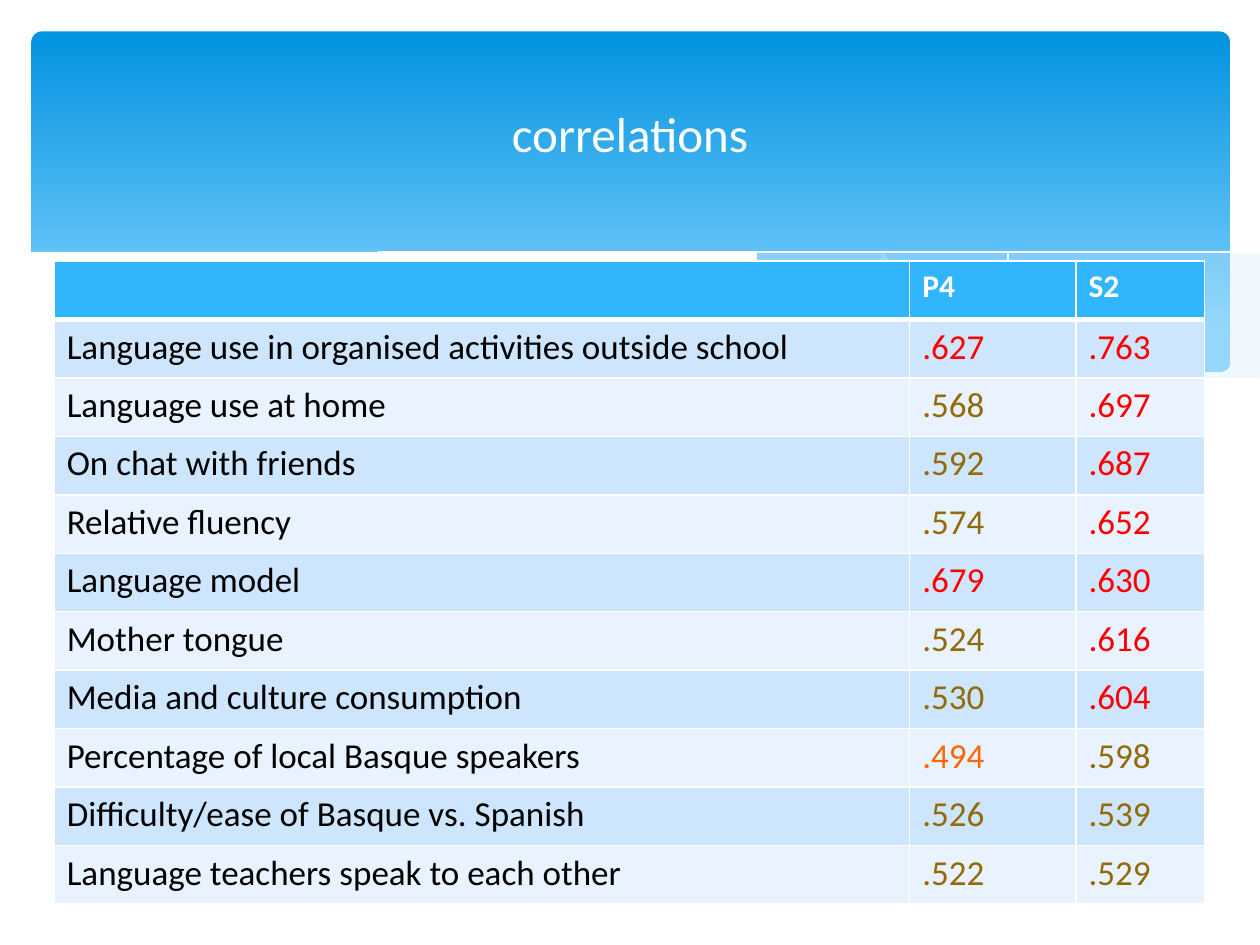
from lxml import etree
from pptx import Presentation
from pptx.dml.color import RGBColor
from pptx.enum import shapes, text
from pptx.oxml.ns import qn
from pptx import util as u

# Content
TITLE = "correlations"
HEAD = ("", "P4", "S2")
ROWS = [
    ("Language use in organised activities outside school", ".627", ".763"),
    ("Language use at home", ".568", ".697"),
    ("On chat with friends", ".592", ".687"),
    ("Relative fluency", ".574", ".652"),
    ("Language model", ".679", ".630"),
    ("Mother tongue", ".524", ".616"),
    ("Media and culture consumption", ".530", ".604"),
    ("Percentage of local Basque speakers", ".494", ".598"),
    ("Difficulty/ease of Basque vs. Spanish", ".526", ".539"),
    ("Language teachers speak to each other", ".522", ".529"),
]
COLS = (6.79, 1.32, 1.02)
TABLE = (0.43, 2.07, sum(COLS), 5.11)

THEME = dict(
    font="Calibri", title=28, head=18, body=20,
    white="FFFFFF", black="000000", top="0293E0", low="83D3FE", wave="C6E7FC",
    bar="31B6FD", bands=("CEE5FE", "E8F3FF"),
    high="FF0000", mid="936A08", weak="FF6600",
)

# Waves: each is a list of curves through a few points, with fill and opacity
WAVES = [
    dict(fill="wave", alpha=29, curves=[
        [(9.76, 2), (9.35, 2.07), (8.61, 2.23), (7.79, 2.42), (7.06, 2.57), (6.61, 2.65)],
        [(6.61, 2.65), (7.19, 2.72), (7.69, 2.77), (8.24, 2.77), (8.81, 2.73),
         (9.28, 2.63), (9.76, 2.47)]]),
    dict(fill="wave", alpha=40, curves=[
        [(8.93, 2.73), (8.07, 2.6), (7.06, 2.4), (6.29, 2.22), (5.55, 2.05), (4.89, 1.94),
         (4.2, 1.87), (3.61, 1.85), (3.13, 1.88), (2.86, 1.91)],
        [(2.86, 1.91), (3.62, 2.03), (4.49, 2.22), (5.3, 2.4), (6.18, 2.58), (6.95, 2.7),
         (7.61, 2.77), (8.18, 2.78), (8.57, 2.77), (8.93, 2.73)]]),
    dict(curves=[
        [(3.09, 1.95), (3.44, 1.9), (3.87, 1.87), (4.33, 1.87), (4.89, 1.9), (5.56, 1.97),
         (6.36, 2.08), (7.27, 2.26), (8.31, 2.51), (9.07, 2.72)]]),
    dict(curves=[
        [(6.13, 2.57), (6.95, 2.35), (7.76, 2.16), (8.66, 1.99), (9.24, 1.9), (9.75, 1.85)]]),
    dict(fill="white", alpha=100, curves=[
        [(9.77, 2.46), (9.3, 2.62), (8.75, 2.73), (8.09, 2.77), (7.44, 2.74), (6.68, 2.65),
         (5.79, 2.5), (4.47, 2.2), (3.65, 2.02), (2.92, 1.9), (2.3, 1.85), (1.77, 1.84),
         (1.32, 1.86), (0.95, 1.91), (0.59, 1.99), (0.23, 2.13)],
        [(0.23, 3.29), (9.77, 3.29)]]),
]


def rgb(name):
    return RGBColor.from_string(THEME.get(name, name))


def box(*nums):
    return [u.Inches(n) for n in nums]


def style(par, size, color, bold=False):
    for run in par.runs:
        font = run.font
        font.name, font.size, font.bold = THEME["font"], u.Pt(size), bold
        font.color.rgb = rgb(color)


def smooth(pts, steps=5):
    """Catmull-Rom curve through the points."""
    ext = [pts[0], *pts, pts[-1]]
    out = [pts[0]]
    for a, b, c, d in zip(ext, ext[1:], ext[2:], ext[3:]):
        for i in range(1, steps + 1):
            t = i / steps
            out.append(tuple(
                (2*q + (r - p)*t + (2*p - 5*q + 4*r - s)*t**2 + (3*q - p - 3*r + s)*t**3) / 2
                for p, q, r, s in zip(a, b, c, d)))
    return out


def draw_wave(slide, curves, fill=None, alpha=100):
    pts = [p for curve in curves for p in smooth(curve)]
    pen = slide.shapes.build_freeform(*pts[0], scale=u.Inches(1))
    pen.add_line_segments(pts[1:], close=fill is not None)
    wave = pen.convert_to_shape()
    wave.shadow.inherit = False
    if fill:
        wave.fill.solid()
        wave.fill.fore_color.rgb = rgb(fill)
        wave.line.fill.background()
        clr = wave.fill._xPr.find(".//" + qn("a:srgbClr"))
        etree.SubElement(clr, qn("a:alpha"), val=str(alpha * 1000))
    else:
        wave.fill.background()
        wave.line.color.rgb = rgb("white")
        wave.line.width = 0


def border(cell, **widths):
    props = cell._tc.get_or_add_tcPr()
    for side in "LRTB":
        width = u.Pt(widths.get(side, 1))
        line = etree.SubElement(props, qn("a:ln" + side), w=str(width))
        fill = etree.SubElement(line, qn("a:solidFill"))
        etree.SubElement(fill, qn("a:srgbClr"), val=THEME["white"])


def grade(value):
    num = float(value)
    return "high" if num >= 0.6 else "mid" if num >= 0.5 else "weak"


def draw_table(slide):
    data = [HEAD, *ROWS]
    grid = slide.shapes.add_table(len(data), len(COLS), *box(*TABLE)).table
    for col, width in zip(grid.columns, COLS):
        col.width = u.Inches(width)
    for r, row in enumerate(data):
        grid.rows[r].height = u.Inches(TABLE[3] / len(data))
        for c, value in enumerate(row):
            cell = grid.cell(r, c)
            cell.text_frame.text = value
            border(cell, B=3 if r == 0 else 1, T=3 if r == 1 else 1)
            cell.fill.solid()
            par = cell.text_frame.paragraphs[0]
            if r == 0:
                cell.fill.fore_color.rgb = rgb("bar")
                style(par, THEME["head"], "white", True)
            else:
                cell.fill.fore_color.rgb = rgb(THEME["bands"][(r - 1) % 2])
                style(par, THEME["body"], grade(value) if c else "black")


def main():
    prs = Presentation()
    prs.slide_width, prs.slide_height = box(10, 7.5)
    slide = prs.slides.add_slide(prs.slide_layouts[6])

    # Banner
    banner = slide.shapes.add_shape(
        shapes.MSO_SHAPE.ROUNDED_RECTANGLE, *box(0.25, 0.25, 9.51, 2.7))
    banner.adjustments[0] = 0.03
    banner.shadow.inherit = False
    banner.line.fill.background()
    banner.fill.gradient()
    banner.fill.gradient_angle = 270
    for stop, name, pos in zip(banner.fill.gradient_stops, ("top", "low"), (0, 0.9)):
        stop.color.rgb, stop.position = rgb(name), pos

    for wave in WAVES:
        draw_wave(slide, **wave)
    draw_table(slide)

    # Title
    frame = slide.shapes.add_textbox(*box(0.5, 0.37, 9, 1.37)).text_frame
    frame.word_wrap = True
    frame.vertical_anchor = text.MSO_ANCHOR.MIDDLE
    frame.text = TITLE
    frame.paragraphs[0].alignment = text.PP_ALIGN.CENTER
    style(frame.paragraphs[0], THEME["title"], "white")

    prs.save("out.pptx")


if __name__ == "__main__":
    main()
